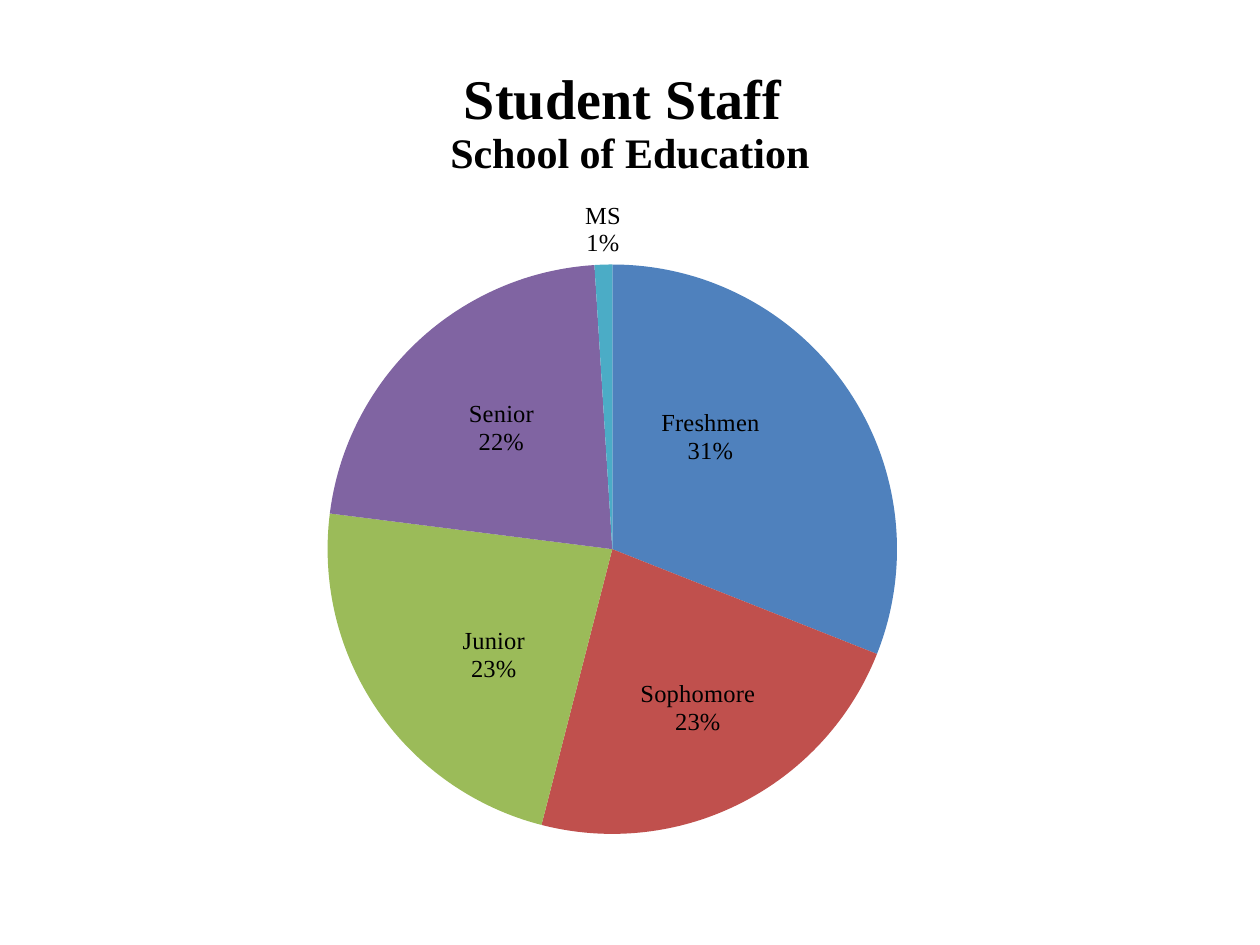
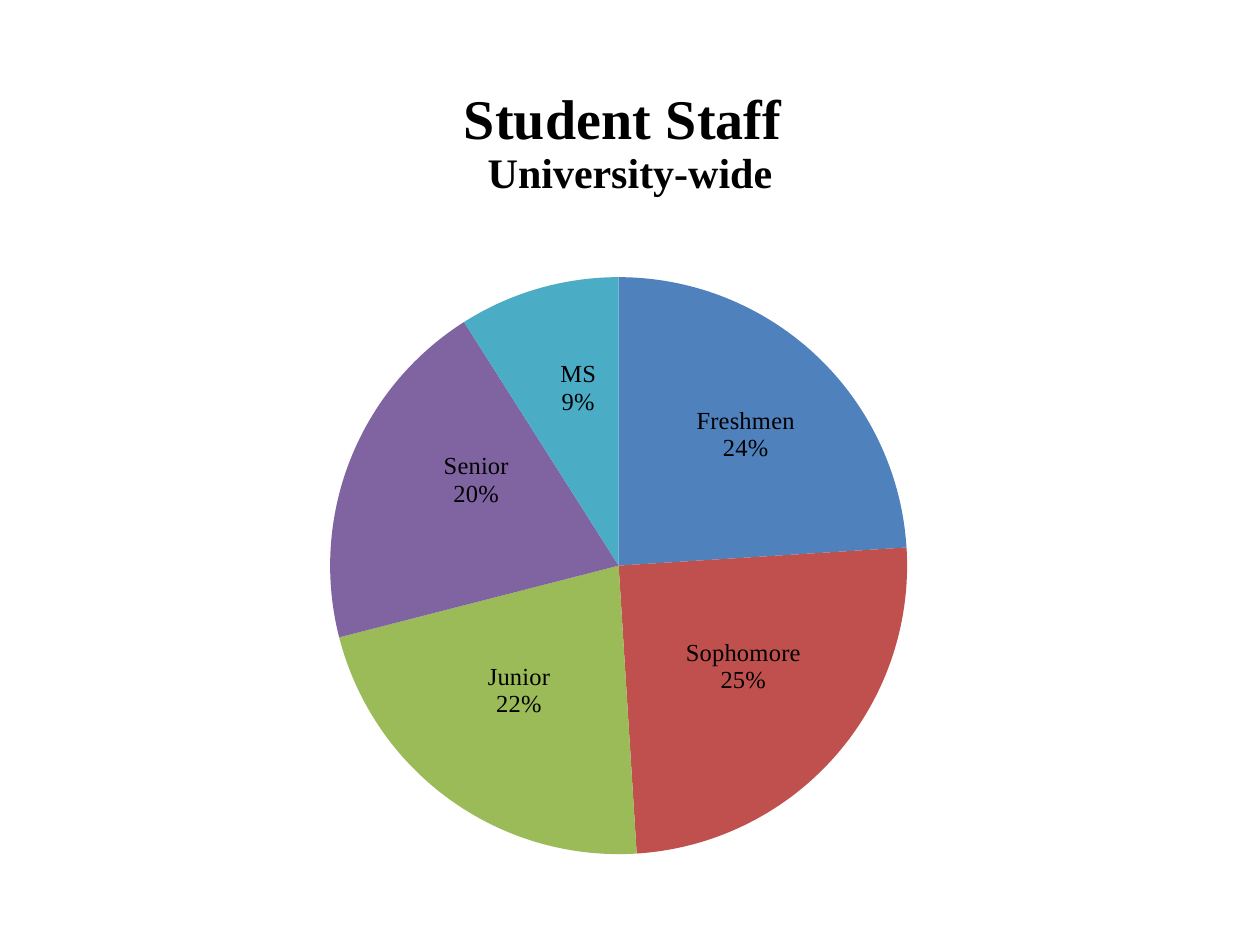
"""Build two slides with pie charts of student staff by class year."""
import math

from lxml import etree
from pptx import Presentation
from pptx import util as u
from pptx.chart.data import CategoryChartData
from pptx.dml.color import RGBColor
from pptx.enum import chart as kinds
from pptx.oxml.ns import qn

COLORS = {
    "text": "000000",
    "Freshmen": "4F81BD",
    "Sophomore": "C0504D",
    "Junior": "9BBB59",
    "Senior": "8064A2",
    "MS": "4BACC6",
}
YEARS = ["Freshmen", "Sophomore", "Junior", "Senior", "MS"]
TITLE = "Student Staff "
SERIF = "Times New Roman"
LEFT, WIDTH = 0.5, 9
SLIDES = [
    {
        "subtitle": "School of Education",
        "shares": [31, 23, 23, 22, 1],
        "top": 0.31, "height": 6.8,
        "center": (4.86, 4.36), "radius": 2.26,
        "labels": [(5.64, 3.47), (5.54, 5.62), (3.92, 5.2), (3.98, 3.4), None],
    },
    {
        "subtitle": "University-wide",
        "shares": [24, 25, 22, 20, 9],
        "top": 0.47, "height": 6.72,
        "center": (4.91, 4.49), "radius": 2.29,
        "labels": [(5.92, 3.45), (5.9, 5.29), (4.12, 5.48), (3.78, 3.81), (4.59, 3.08)],
    },
]
LABEL_FLAGS = {
    "showLegendKey": 0, "showVal": 0, "showCatName": 1, "showSerName": 0,
    "showPercent": 1, "showBubbleSize": 0, "showLeaderLines": 0,
}


def style_font(font, size, bold=False, name=SERIF):
    font.name, font.size, font.bold = name, u.Pt(size), bold
    font.color.rgb = RGBColor.from_string(COLORS["text"])


def manual_layout(**settings):
    layout = etree.Element(qn("c:layout"))
    manual = etree.SubElement(layout, qn("c:manualLayout"))
    for name, value in settings.items():
        etree.SubElement(manual, qn(f"c:{name}")).set("val", str(value))
    return layout


def add_title(chart, subtitle):
    frame = chart.chart_title.text_frame
    frame.text = f"{TITLE}\n{subtitle}"
    for para, size in zip(frame.paragraphs, (32, 24)):
        style_font(para.runs[0].font, size, bold=True)
    chart.chart_title.include_in_layout = False


def place_pie(chart, content):
    (x, y), radius = content["center"], content["radius"]
    area = chart.element.find(".//" + qn("c:plotArea"))
    for layout in area.findall(qn("c:layout")):
        area.remove(layout)
    area.insert(0, manual_layout(
        layoutTarget="inner", xMode="edge", yMode="edge",
        x=(x - radius - LEFT) / WIDTH,
        y=(y - radius - content["top"]) / content["height"],
        w=2 * radius / WIDTH, h=2 * radius / content["height"],
    ))


def label_offset(content, index):
    shares, (x, y) = content["shares"], content["center"]
    middle = sum(shares[:index]) + shares[index] / 2
    angle = 2 * math.pi * middle / sum(shares)
    reach = content["radius"] / 2
    label_x, label_y = content["labels"][index]
    return manual_layout(
        x=(label_x - x - reach * math.sin(angle)) / WIDTH,
        y=(label_y - y + reach * math.cos(angle)) / content["height"],
    )


def add_labels(chart, content):
    positions = kinds.XL_LABEL_POSITION
    series = chart.plots[0].series[0]
    style_font(series.data_labels.font, 14)
    for index, spot in enumerate(content["labels"]):
        label = series.points[index].data_label
        style_font(label.font, 14)
        label.position = positions.CENTER if spot else positions.OUTSIDE_END
    group = chart.element.find(f".//{qn('c:ser')}/{qn('c:dLbls')}")
    for name, value in LABEL_FLAGS.items():
        for flag in group.iter(qn(f"c:{name}")):
            flag.set("val", str(value))
    for flag in list(group.iter(qn("c:showBubbleSize"))):
        separator = etree.Element(qn("c:separator"))
        separator.text = "\n"
        flag.addnext(separator)
    for index, item in enumerate(group.findall(qn("c:dLbl"))):
        if content["labels"][index]:
            item.find(qn("c:idx")).addnext(label_offset(content, index))


def add_pie(slide, content):
    data = CategoryChartData()
    data.categories = YEARS
    data.add_series("Series 1", content["shares"])
    chart = slide.shapes.add_chart(
        kinds.XL_CHART_TYPE.PIE, u.Inches(LEFT), u.Inches(content["top"]),
        u.Inches(WIDTH), u.Inches(content["height"]), data,
    ).chart
    chart.has_legend = False
    style_font(chart.font, 10, name="Calibri")
    add_title(chart, content["subtitle"])
    plot = chart.plots[0]
    plot.vary_by_categories = True
    for index, year in enumerate(YEARS):
        fill = plot.series[0].points[index].format.fill
        fill.solid()
        fill.fore_color.rgb = RGBColor.from_string(COLORS[year])
    add_labels(chart, content)
    place_pie(chart, content)


def main():
    deck = Presentation()
    deck.slide_width, deck.slide_height = u.Inches(10), u.Inches(7.5)
    for content in SLIDES:
        add_pie(deck.slides.add_slide(deck.slide_layouts[6]), content)
    deck.save("out.pptx")


if __name__ == "__main__":
    main()
